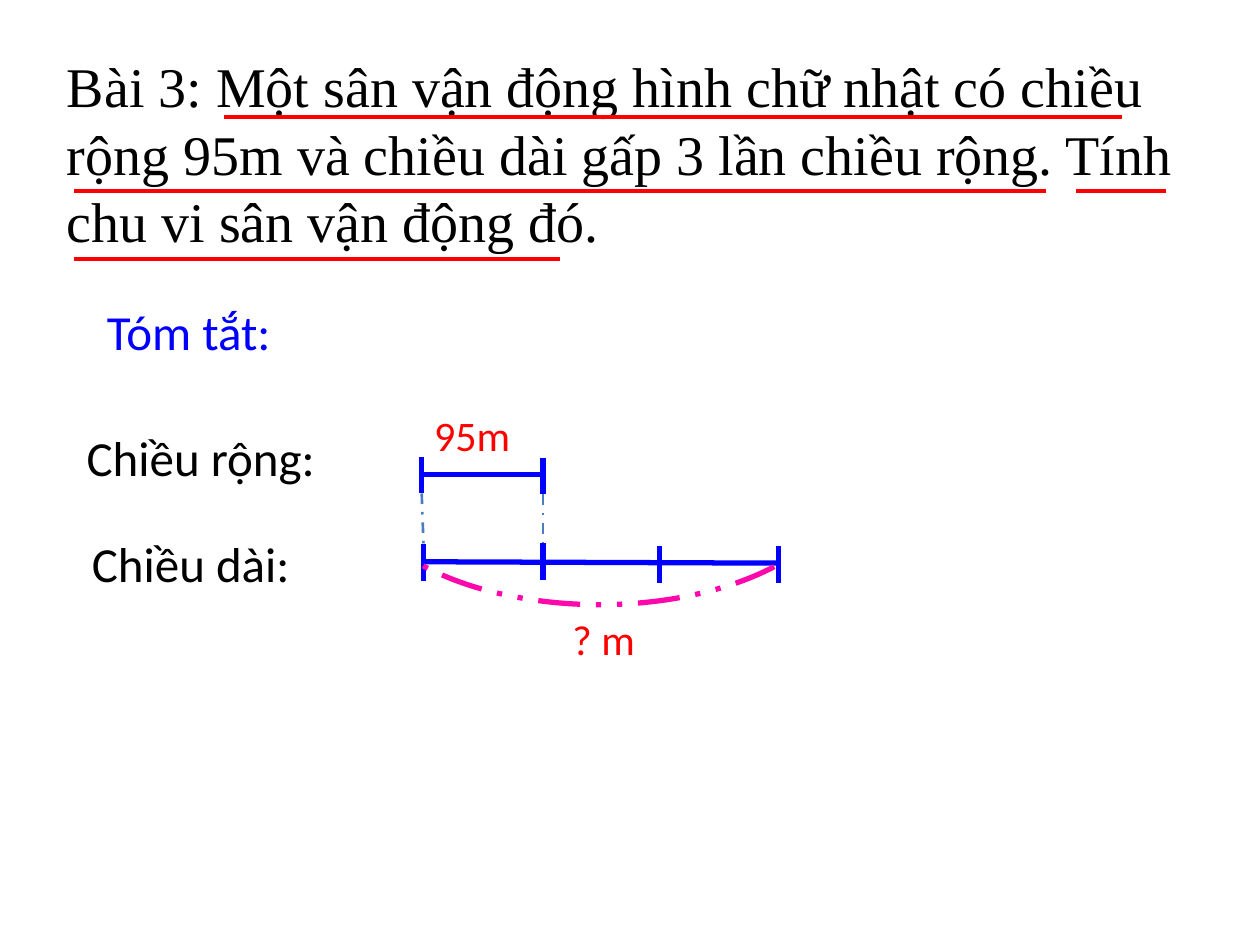
from lxml import etree
from pptx import Presentation
from pptx.dml.color import RGBColor
from pptx.enum.dml import MSO_LINE
from pptx.enum.shapes import MSO_CONNECTOR, MSO_SHAPE
from pptx.enum.text import MSO_ANCHOR, MSO_AUTO_SIZE, PP_ALIGN
from pptx.oxml.ns import qn
from pptx.util import Pt

STRAIGHT = MSO_CONNECTOR.STRAIGHT
DASH_DOT = MSO_LINE.DASH_DOT
DASH_DOT_DOT = MSO_LINE.DASH_DOT_DOT
ARC = MSO_SHAPE.ARC
TOP, LEFT, NO_FIT = MSO_ANCHOR.TOP, PP_ALIGN.LEFT, MSO_AUTO_SIZE.NONE

COLORS = {"black": "000000", "red": "FF0000", "blue": "0000FF",
          "guide": "4B7EBC", "pink": "FE08AC"}

prs = Presentation()
prs.slide_width, prs.slide_height = Pt(720), Pt(540)
slide = prs.slides.add_slide(prs.slide_layouts[5])


def write(box, text, size, font, color):
    frame = box.text_frame
    frame.word_wrap = True
    frame.auto_size = NO_FIT
    frame.vertical_anchor = TOP
    paragraph = frame.paragraphs[0]
    paragraph.text = text
    paragraph.alignment = LEFT
    for run in paragraph.runs:
        run.font.size = Pt(size)
        run.font.name = font
        run.font.color.rgb = RGBColor.from_string(COLORS[color])


def draw_line(x1, y1, x2, y2, color, width, dash=None):
    line = slide.shapes.add_connector(STRAIGHT, Pt(x1), Pt(y1), Pt(x2), Pt(y2))
    line.line.color.rgb = RGBColor.from_string(COLORS[color])
    line.line.width = Pt(width)
    if dash:
        line.line.dash_style = dash
    etree.SubElement(line._element.spPr, qn("a:effectLst"))


# Problem statement with its key phrases underlined
problem = slide.shapes.title
problem.left, problem.top, problem.width, problem.height = Pt(31), Pt(26), Pt(669), Pt(124)
write(problem, "Bài 3: Một sân vận động hình chữ nhật có chiều rộng 95m và chiều dài "
      "gấp 3 lần chiều rộng. Tính chu vi sân vận động đó.",
      32, "Times New Roman", "black")

for start, end, y in [(128, 641, 67), (42.5, 598, 109), (615, 666, 109), (42.5, 320, 148)]:
    draw_line(start, y, end, y, "red", 2.25)

# Summary labels
for text, x, y, width, height, size, color in [
    ("Tóm tắt:", 54, 169, 249, 41, 28, "blue"),
    ("Chiều rộng:", 42.5, 240.5, 199, 41, 28, "black"),
    ("Chiều dài:", 45.5, 301.5, 277, 41, 28, "black"),
    ("95m", 241, 230.5, 63, 36, 24, "red"),
    ("? m", 320, 347, 64, 36, 24, "red"),
]:
    label = slide.shapes.add_textbox(Pt(x), Pt(y), Pt(width), Pt(height))
    write(label, text, size, "Calibri", color)

# Width: one part; length: three equal parts
width_ticks = [(241, 261), (310.3, 261.5)]
length_ticks = [(242, 311), (310.3, 310.5), (377, 312), (445, 312)]
for x, y in width_ticks + length_ticks:
    draw_line(x, y, x, y + 21, "blue", 3)
draw_line(242, 271, 310.3, 271, "blue", 3)
draw_line(241.5, 321, 445, 321.8, "blue", 3)

# Guides from the width down to the first part of the length
for (x1, y1), (x2, y2) in zip(width_ticks, length_ticks):
    draw_line(x1, y1 + 21, x2, y2, "guide", 1.5, DASH_DOT)

# Brace spanning the unknown length
length_arc = slide.shapes.add_shape(ARC, Pt(201.5), Pt(198), Pt(282), Pt(147.5))
length_arc.adjustments[0] = 124.51
length_arc.adjustments[1] = 200.01
length_arc.rotation = 180
length_arc.shadow.inherit = False
length_arc.fill.background()
length_arc.line.color.rgb = RGBColor.from_string(COLORS["pink"])
length_arc.line.width = Pt(3)
length_arc.line.dash_style = DASH_DOT_DOT

prs.save("out.pptx")
